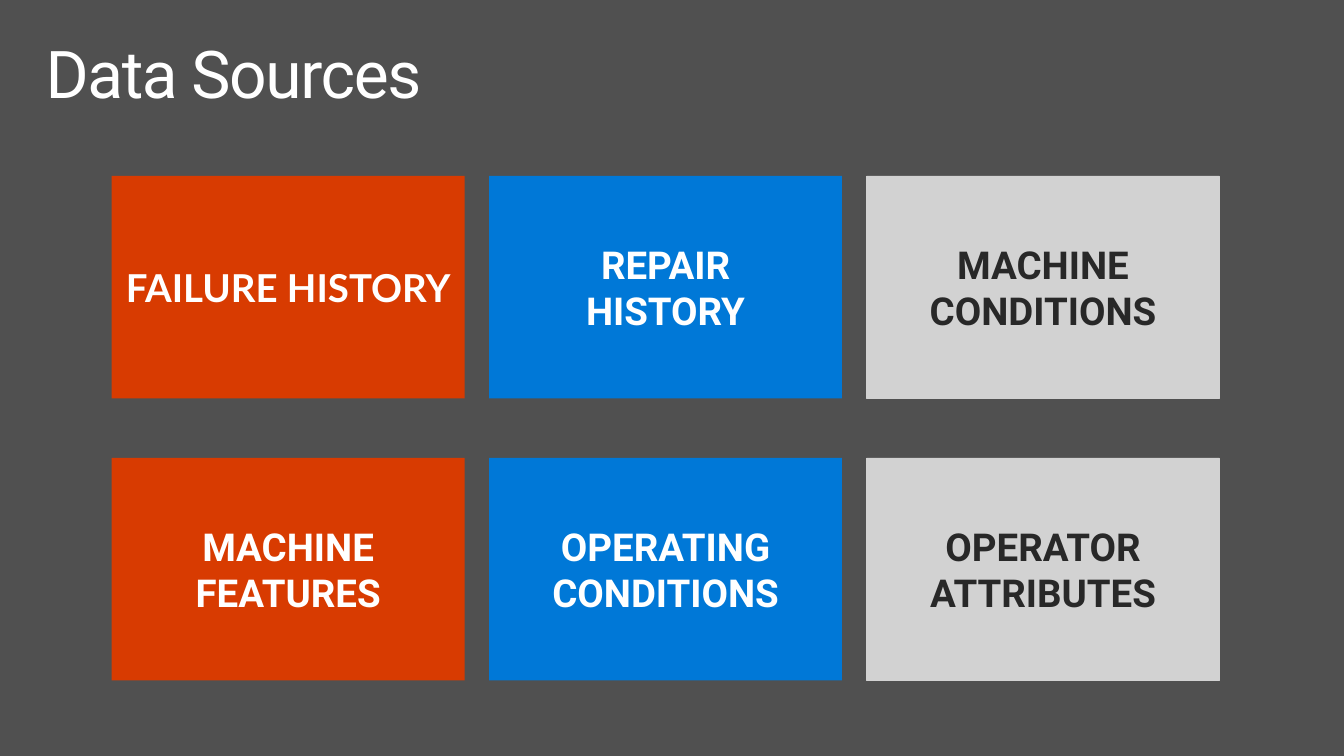
from pptx import Presentation
from pptx.dml.color import RGBColor
from pptx.enum.shapes import MSO_SHAPE
from pptx.enum.text import MSO_ANCHOR, MSO_AUTO_SIZE, PP_ALIGN
from pptx.util import Cm, Pt

BACKGROUND = RGBColor(0x50, 0x50, 0x50)
WHITE = RGBColor(0xFF, 0xFF, 0xFF)
ORANGE = RGBColor(0xD8, 0x3B, 0x01)
BLUE = RGBColor(0x00, 0x78, 0xD7)
LIGHT_GRAY = RGBColor(0xD2, 0xD2, 0xD2)
DARK_GRAY = RGBColor(0x28, 0x28, 0x28)


def add_run(paragraph, text, font_name, size, color, bold):
    run = paragraph.add_run()
    run.text = text
    run.font.name = font_name
    run.font.size = Pt(size)
    run.font.color.rgb = color
    run.font.bold = bold
    return run


presentation = Presentation()
presentation.slide_width = Cm(34.54)
presentation.slide_height = Cm(19.43)
slide = presentation.slides.add_slide(presentation.slide_layouts[5])
slide.background.fill.solid()
slide.background.fill.fore_color.rgb = BACKGROUND

title = slide.shapes.title
title.left, title.top = Cm(0.76), Cm(0.81)
title.width, title.height = Cm(33.02), Cm(2.54)
title_frame = title.text_frame
title_frame.auto_size = MSO_AUTO_SIZE.NONE
title_frame.word_wrap = True
title_frame.vertical_anchor = MSO_ANCHOR.TOP
title_frame.margin_left = title_frame.margin_right = Cm(0.41)
title_frame.margin_top = title_frame.margin_bottom = Cm(0.25)
title_paragraph = title_frame.paragraphs[0]
title_paragraph.alignment = PP_ALIGN.LEFT
title_paragraph.line_spacing = 0.9
title_run = add_run(title_paragraph, "Data Sources", "Roboto", 48, WHITE, False)
title_run.font._element.set("spc", "-100")

TILE_WIDTH, TILE_HEIGHT = 9.07, 5.72
LEFT, TOP = 2.87, 4.52
COLUMN_STEP, ROW_STEP = 9.7, 7.25

columns = [
    (ORANGE, WHITE, [(["FAILURE HISTORY"], "Lato"), (["MACHINE FEATURES"], "Roboto")]),
    (BLUE, WHITE, [(["REPAIR", "HISTORY"], "Roboto"), (["OPERATING CONDITIONS"], "Roboto")]),
    (LIGHT_GRAY, DARK_GRAY, [(["MACHINE CONDITIONS"], "Roboto"), (["OPERATOR ATTRIBUTES"], "Roboto")]),
]

for column, (fill_color, text_color, tiles) in enumerate(columns):
    for row, (lines, font_name) in enumerate(tiles):
        tile = slide.shapes.add_shape(
            MSO_SHAPE.RECTANGLE,
            Cm(LEFT + column * COLUMN_STEP),
            Cm(TOP + row * ROW_STEP),
            Cm(TILE_WIDTH),
            Cm(TILE_HEIGHT),
        )
        tile.shadow.inherit = False
        tile.fill.solid()
        tile.fill.fore_color.rgb = fill_color
        if fill_color == LIGHT_GRAY:
            tile.line.color.rgb = LIGHT_GRAY
            tile.line.width = Pt(0.25)
        else:
            tile.line.fill.background()
        text_frame = tile.text_frame
        text_frame.word_wrap = True
        text_frame.vertical_anchor = MSO_ANCHOR.MIDDLE
        for index, line in enumerate(lines):
            paragraph = text_frame.add_paragraph() if index else text_frame.paragraphs[0]
            paragraph.alignment = PP_ALIGN.CENTER
            add_run(paragraph, line, font_name, 28, text_color, True)

presentation.save("out.pptx")
